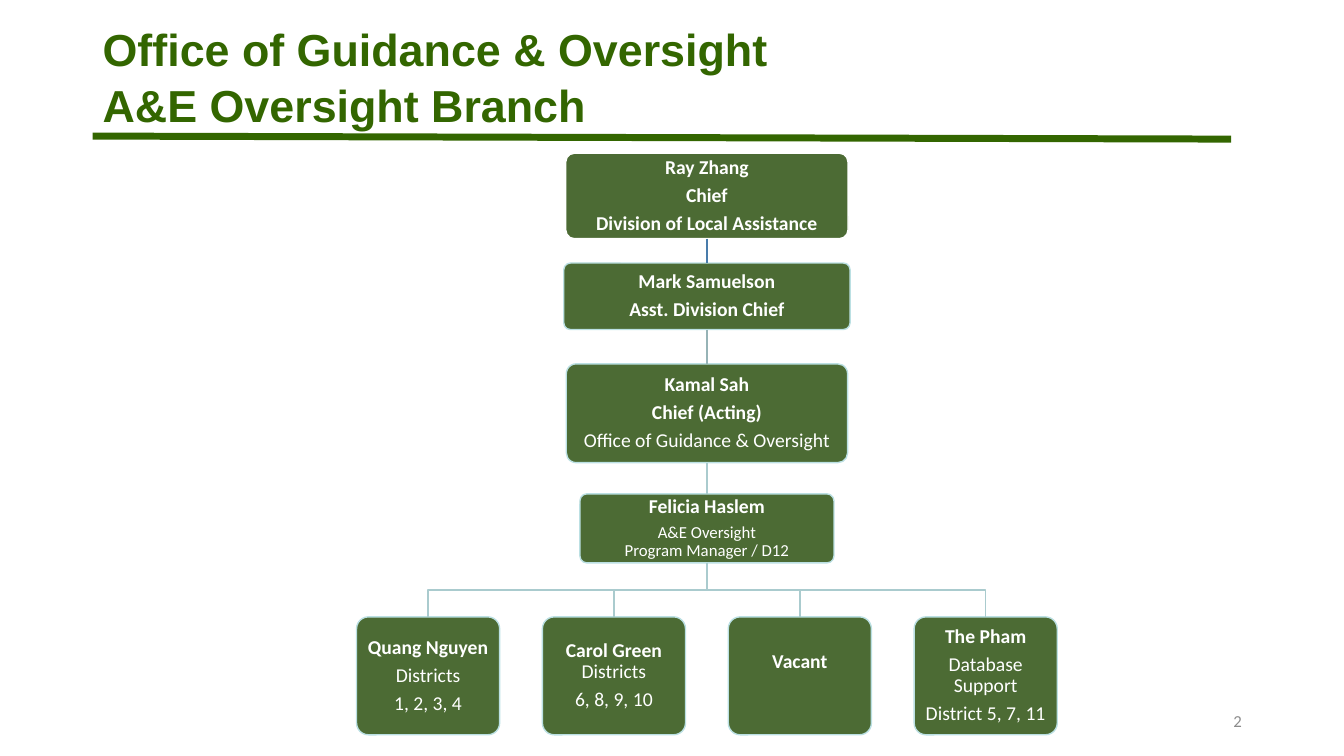
from pptx import Presentation
from pptx import util as u
from pptx.dml.color import RGBColor
from pptx.enum import shapes, text
from pptx.oxml import ns, xmlchemy

THEME = {
    "title": "336600", "box": "395B1F", "opacity": 90, "edge": "BBE0E3",
    "white": "FFFFFF", "branch": "AACBCE", "number": "8C8C8C",
    "heading_font": "Arial", "body_font": "Calibri",
    "title_size": 32, "name_size": 14, "detail_size": 12,
}

presentation = Presentation()
presentation.slide_width = u.Inches(13.33)
presentation.slide_height = u.Inches(7.5)
slide = presentation.slides.add_slide(presentation.slide_layouts[6])

# Grid of 100 columns by 100 rows
COLUMN = presentation.slide_width / 100
ROW = presentation.slide_height / 100
INSET = int(0.45 * COLUMN)


def write(shape, paragraphs, size, color, font=THEME["body_font"],
          align=text.PP_ALIGN.CENTER, spacing=0.9, gap=0):
    """Fill a shape; each paragraph is a list of (text, bold) lines."""
    frame = shape.text_frame
    frame.word_wrap = True
    frame.vertical_anchor = text.MSO_ANCHOR.MIDDLE
    for index, lines in enumerate(paragraphs):
        paragraph = frame.add_paragraph() if index else frame.paragraphs[0]
        paragraph.alignment = align
        paragraph.line_spacing = spacing
        last = index == len(paragraphs) - 1
        paragraph.space_after = u.Pt(0 if last else gap)
        for position, (words, bold, *own_size) in enumerate(lines):
            if position:
                paragraph.add_line_break()
            run = paragraph.add_run()
            run.text = words
            run.font.name = font
            run.font.bold = bold
            run.font.size = u.Pt(own_size[0] if own_size else size)
            run.font.color.rgb = RGBColor.from_string(color)


def draw_line(shape, color, width=1):
    """Colour an outline or connector and drop its shadow."""
    shape.line.color.rgb = RGBColor.from_string(color)
    shape.line.width = u.Pt(width)
    properties = shape._element.spPr
    if properties.find(ns.qn("a:effectLst")) is None:
        properties.append(xmlchemy.OxmlElement("a:effectLst"))


# Title and rule
rule = slide.shapes.add_connector(
    shapes.MSO_CONNECTOR.STRAIGHT, int(6.9 * COLUMN), int(18 * ROW),
    int(91.6 * COLUMN), int(18.4 * ROW))
draw_line(rule, THEME["title"], 5)
title = slide.shapes.add_textbox(
    int(6.9 * COLUMN), int(1.75 * ROW), int(84.7 * COLUMN), int(16.4 * ROW))
write(title, [[("Office of Guidance & Oversight", True),
               ("A&E Oversight Branch", True)]],
      THEME["title_size"], THEME["title"], THEME["heading_font"],
      text.PP_ALIGN.LEFT, spacing=1.05)

# Slide number
number = slide.shapes.add_textbox(
    int(70.65 * COLUMN), int(92.7 * ROW), int(22.5 * COLUMN), int(5.3 * ROW))
write(number, [[("2", False)]], THEME["detail_size"], THEME["number"],
      align=text.PP_ALIGN.RIGHT, spacing=1)

# Organization: centre column, top row, width, height, edge, paragraphs
CENTER, STAFF_PITCH = 52.6, 13.83
SMALL = THEME["detail_size"]
chain = [
    (CENTER, 20.27, 21, 11.3, THEME["white"],
     [[("Ray Zhang", True)], [("Chief", True)],
      [("Division of Local Assistance", True)]]),
    (CENTER, 34.8, 21.3, 8.8, THEME["edge"],
     [[("Mark Samuelson", True)], [("Asst. Division Chief", True)]]),
    (CENTER, 48.13, 20.93, 13.07, THEME["edge"],
     [[("Kamal Sah", True)], [("Chief (Acting)", True)],
      [("Office of Guidance & Oversight", False)]]),
    (CENTER, 65.33, 18.9, 9.13, THEME["edge"],
     [[("Felicia Haslem", True)],
      [("A&E Oversight", False, SMALL),
       ("Program Manager / D12", False, SMALL)]]),
]
staff_texts = [
    [[("Quang Nguyen", True)], [("Districts", False)], [("1, 2, 3, 4", False)]],
    [[("Carol Green", True), ("Districts", False)], [("6, 8, 9, 10", False)]],
    [[("Vacant", True)]],
    [[("The Pham", True)], [("Database Support", False)],
     [("District 5, 7, 11", False)]],
]
staff = [(CENTER + (index - 1.5) * STAFF_PITCH, 81.6, 10.65, 15.6,
          THEME["edge"], paragraphs)
         for index, paragraphs in enumerate(staff_texts)]

# Boxes
boxes = []
for center, top, width, height, edge, paragraphs in chain + staff:
    box = slide.shapes.add_shape(
        shapes.MSO_SHAPE.ROUNDED_RECTANGLE, int((center - width / 2) * COLUMN),
        int(top * ROW), int(width * COLUMN), int(height * ROW))
    box.adjustments[0] = 0.1
    box.shadow.inherit = False
    box.fill.solid()
    box.fill.fore_color.rgb = RGBColor.from_string(THEME["box"])
    alpha = xmlchemy.OxmlElement("a:alpha")
    alpha.set("val", str(THEME["opacity"] * 1000))
    box._element.spPr.find(".//" + ns.qn("a:srgbClr")).append(alpha)
    draw_line(box, edge)
    frame = box.text_frame
    frame.margin_left = frame.margin_right = INSET
    frame.margin_top = frame.margin_bottom = INSET
    write(box, paragraphs, THEME["name_size"], THEME["white"],
          gap=0.35 * THEME["name_size"])
    boxes.append(box)

# The vacant post sits above the middle of its box
vacant = boxes[len(chain) + 2]
vacant.text_frame.margin_bottom = int(4.53 * ROW)

# Lines down the chain of command
managers = boxes[:len(chain)]
link_colors = ["497CAB", "96B3B6", THEME["branch"]]
for upper, lower, color in zip(managers, managers[1:], link_colors):
    link = slide.shapes.add_connector(shapes.MSO_CONNECTOR.STRAIGHT, 0, 0, 0, 0)
    link.begin_connect(upper, 2)
    link.end_connect(lower, 0)
    draw_line(link, color)

# Branches from the program manager to the staff
manager = managers[-1]
start_x = manager.left + manager.width // 2
start_y = manager.top + manager.height
for member in boxes[len(chain):]:
    end_x = member.left + member.width // 2
    middle_y = (start_y + member.top) // 2
    builder = slide.shapes.build_freeform(start_x, start_y)
    builder.add_line_segments(
        [(start_x, middle_y), (end_x, middle_y), (end_x, member.top)],
        close=False)
    branch = builder.convert_to_shape()
    branch.fill.background()
    draw_line(branch, THEME["branch"])

presentation.save("out.pptx")
